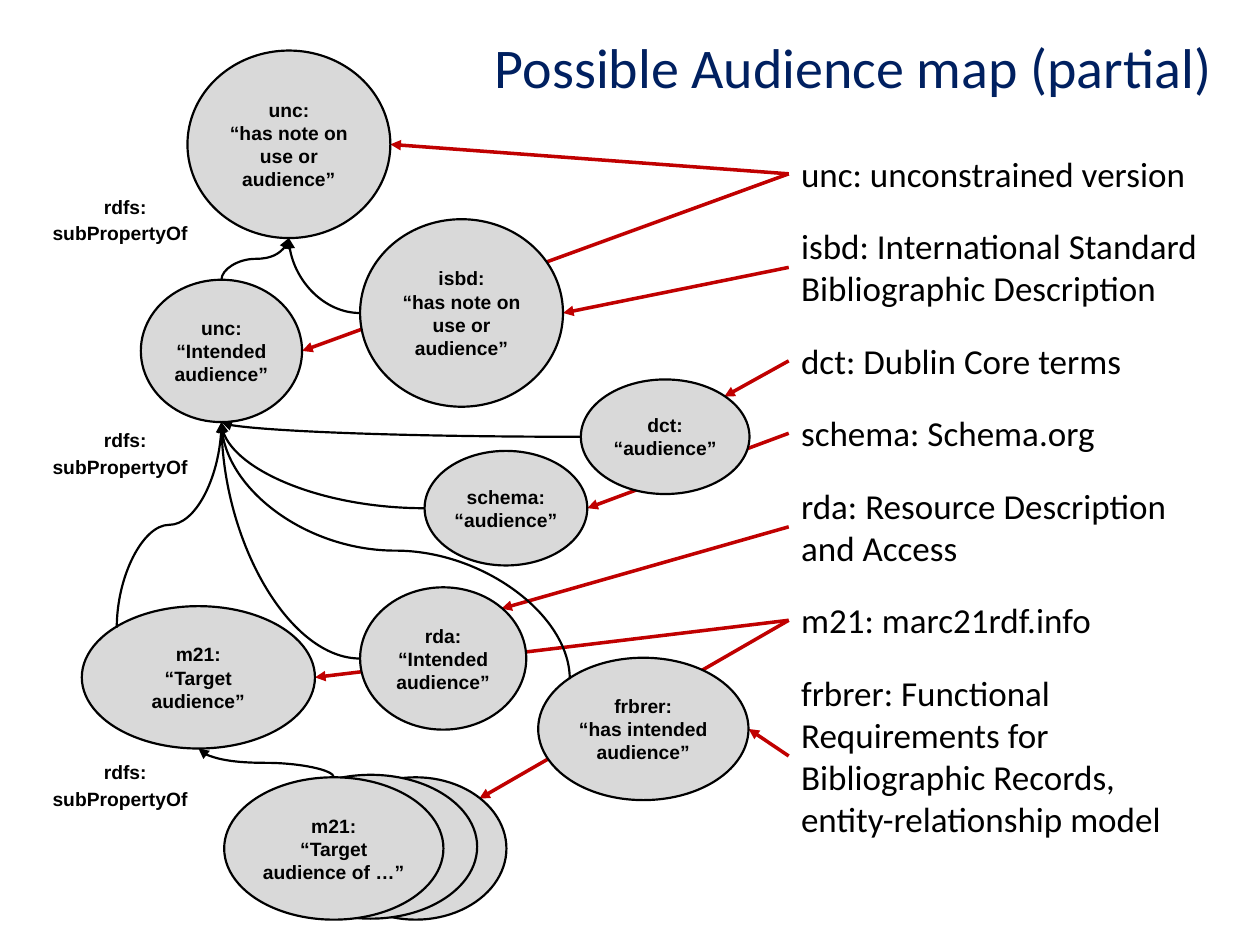
from lxml.etree import SubElement
from pptx import Presentation
from pptx.dml.color import RGBColor
from pptx.enum.shapes import MSO_CONNECTOR, MSO_SHAPE
from pptx.enum.text import MSO_ANCHOR, PP_ALIGN
from pptx.oxml.ns import qn
from pptx.util import Cm, Pt


def paint(fill, colour):
    fill.solid()
    fill.fore_color.rgb = RGBColor.from_string(colour)


def write(shape, text, font="Calibri", size=20, colour="000000", bold=False,
          align=PP_ALIGN.LEFT, anchor=MSO_ANCHOR.TOP, wrap=True, inset=None):
    frame = shape.text_frame
    frame.word_wrap = wrap
    frame.vertical_anchor = anchor
    if inset is not None:
        frame.margin_left = frame.margin_right = Cm(inset)
        frame.margin_top = frame.margin_bottom = Cm(inset)
    frame.text = text
    for para in frame.paragraphs:
        para.alignment = align
        for span in para.runs:
            span.font.name = font
            span.font.size = Pt(size)
            span.font.bold = bold
            paint(span.font.fill, colour)


deck = Presentation()
deck.slide_width, deck.slide_height = Cm(25.4), Cm(19.05)
page = deck.slides.add_slide(deck.slide_layouts[6])
shapes = page.shapes

ovals = {
    "unc note": (3.78, 1.02, 4.09, 3.78, "unc:\n“has note on use or audience”"),
    "isbd": (7.26, 4.42, 4.09, 3.78, "isbd:\n“has note on use or audience”"),
    "unc intended": (2.84, 5.64, 3.25, 2.87, "unc:\n“Intended audience”"),
    "rda": (7.26, 11.84, 3.35, 2.87, "rda:\n“Intended audience”"),
    "m21": (1.65, 12.22, 4.7, 2.87, "m21:\n“Target audience”"),
    "frbrer": (10.85, 13.26, 4.24, 2.87, "frbrer:\n“has intended audience”"),
    "dct": (11.71, 7.65, 3.4, 2.31, "dct:\n“audience”"),
    "m21 back": (6.55, 15.67, 3.66, 2.87, ""),
    "m21 middle": (5.33, 15.62, 4.29, 2.9, ""),
    "m21 front": (4.52, 15.67, 4.42, 2.87, "m21:\n“Target audience of …”"),
    "schema": (8.56, 9.09, 3.28, 2.31, "schema:\n“audience”"),
}
sites = {
    "top": (0.5, 0), "bottom": (0.5, 1), "left": (0, 0.5), "right": (1, 0.5),
    "top left": (0.15, 0.15), "top right": (0.85, 0.15),
}
points = {
    (name, site): (left + across * width, top + down * height)
    for name, (left, top, width, height, text) in ovals.items()
    for site, (across, down) in sites.items()
}

title = shapes.add_textbox(Cm(9.3), Cm(0.53), Cm(15.39), Cm(1.63))
write(title, "Possible Audience map (partial)", size=32, colour="002060", align=PP_ALIGN.RIGHT)

legend = [
    ("unc: unconstrained version", 1, 8.61, [("unc note", "right"), ("unc intended", "right")]),
    ("isbd: International Standard Bibliographic Description", 2, 9.14, [("isbd", "right")]),
    ("dct: Dublin Core terms", 1, 8.61, [("dct", "top right")]),
    ("schema: Schema.org", 1, 7.6, [("schema", "right")]),
    ("rda: Resource Description and Access", 2, 8.61, [("rda", "top right")]),
    ("m21: marc21rdf.info", 1, 6.73, [("m21", "right"), ("m21 back", "top right")]),
    ("frbrer: Functional Requirements for Bibliographic Records, entity-relationship model",
     4, 8.61, [("frbrer", "right")]),
]
arrows = []
legend_left, legend_top, legend_gap = 15.9, 2.95, 0.35
for text, rows, width, targets in legend:
    height = 0.26 + 0.85 * rows
    box = shapes.add_textbox(Cm(legend_left), Cm(legend_top), Cm(width), Cm(height))
    write(box, text)
    for target in targets:
        x, y = points[target]
        pointer = shapes.add_connector(
            MSO_CONNECTOR.STRAIGHT, Cm(legend_left), Cm(legend_top + height / 2), Cm(x), Cm(y))
        pointer.begin_connect(box, 1)
        arrows.append((pointer, "C00000", 2))
    legend_top += height + legend_gap

for left, top, width, height, text in ovals.values():
    oval = shapes.add_shape(MSO_SHAPE.OVAL, Cm(left), Cm(top), Cm(width), Cm(height))
    oval.shadow.inherit = False
    paint(oval.fill, "D9D9D9")
    paint(oval.line.fill, "000000")
    oval.line.width = Pt(1.25)
    if text:
        write(oval, text, font="Arial", size=11, bold=True, align=PP_ALIGN.CENTER,
              anchor=MSO_ANCHOR.MIDDLE, inset=0)

curves = [
    ("dct", "left", "unc intended"),
    ("isbd", "left", "unc note"),
    ("unc intended", "top", "unc note"),
    ("rda", "left", "unc intended"),
    ("m21", "top left", "unc intended"),
    ("frbrer", "top left", "unc intended"),
    ("m21 front", "top", "m21"),
    ("schema", "left", "unc intended"),
]
for source, site, target in curves:
    x1, y1 = points[source, site]
    x2, y2 = points[target, "bottom"]
    width, height = abs(x2 - x1), abs(y2 - y1)
    if site == "left":
        preset, turn, flips = "curvedConnector2", 180, []
    else:
        width, height = height, width
        preset = "curvedConnector3"
        turn, flips = (90, ["flipH", "flipV"]) if x2 > x1 else (270, ["flipV"])
    left, top = (x1 + x2 - width) / 2, (y1 + y2 - height) / 2
    curve = shapes.add_connector(
        MSO_CONNECTOR.CURVE, Cm(left), Cm(top), Cm(left + width), Cm(top + height))
    properties = curve._element.spPr
    properties.find(qn("a:prstGeom")).set("prst", preset)
    frame = properties.find(qn("a:xfrm"))
    frame.set("rot", str(turn * 60000))
    for flip in flips:
        frame.set(flip, "1")
    arrows.append((curve, "000000", 1.25))

for arrow, colour, weight in arrows:
    paint(arrow.line.fill, colour)
    arrow.line.width = Pt(weight)
    properties = arrow._element.spPr
    SubElement(properties.find(qn("a:ln")), qn("a:tailEnd"), type="triangle")
    SubElement(properties, qn("a:effectLst"))

for top in (3.81, 8.51, 15.21):
    label = shapes.add_textbox(Cm(0.81), Cm(top), Cm(3.43), Cm(1.83))
    write(label, "rdfs:\nsubPropertyOf", font="Arial", size=11, bold=True, wrap=False)
    first, second = label.text_frame.paragraphs
    first.alignment = PP_ALIGN.CENTER
    second.line_spacing = 1.15
    second.space_after = Pt(10)

deck.save("out.pptx")
